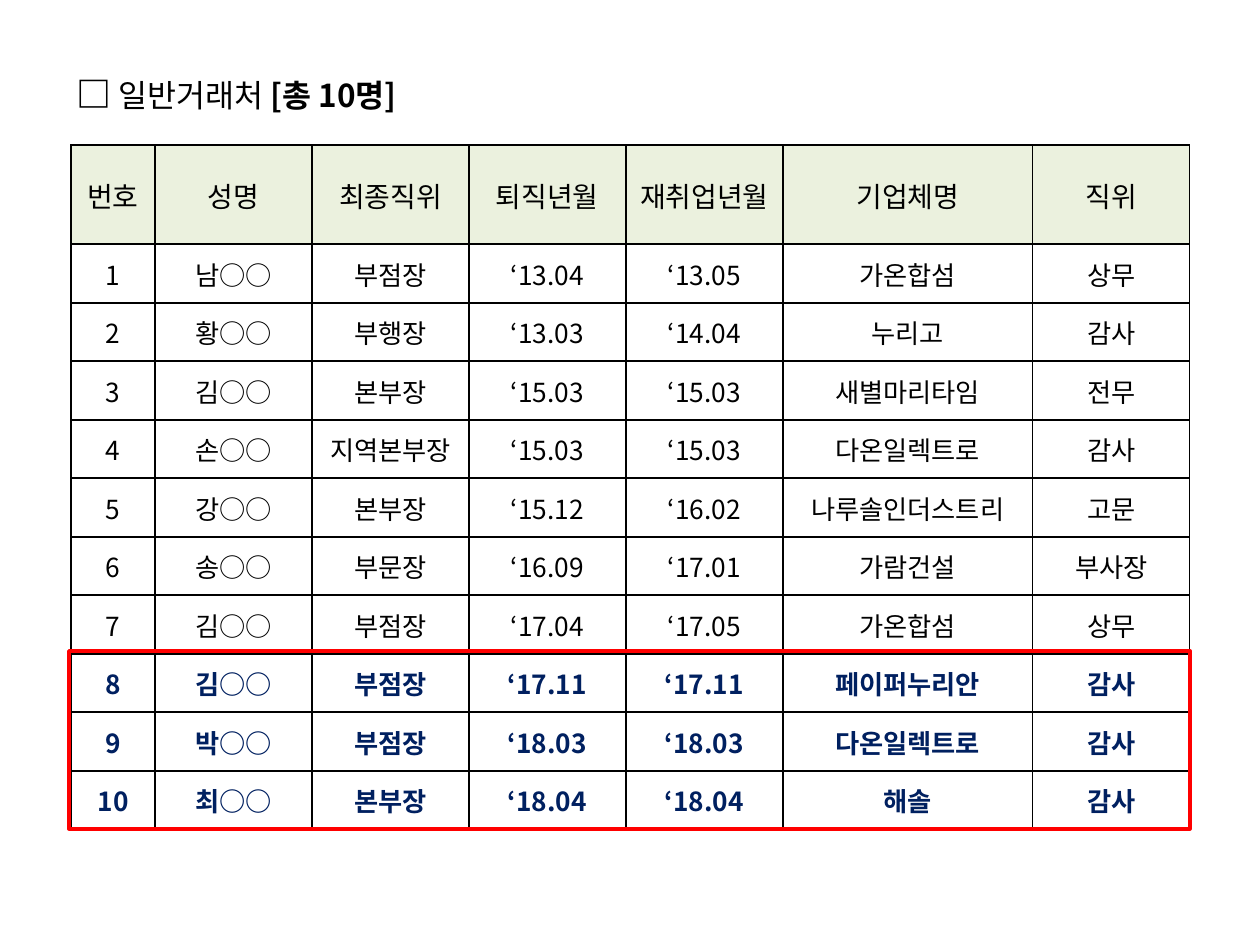
from pptx import Presentation
from pptx.dml.color import RGBColor
from pptx.enum.shapes import MSO_SHAPE
from pptx.enum.text import MSO_ANCHOR, MSO_AUTO_SIZE, PP_ALIGN
from pptx.oxml import parse_xml
from pptx.oxml.ns import nsdecls, qn
from pptx.util import Pt
from lxml.etree import SubElement

PX = 914400 / 126
FONT = "Noto Sans CJK KR"
BLACK = RGBColor(0x00, 0x00, 0x00)
NAVY = RGBColor(0x00, 0x20, 0x60)
RED = RGBColor(0xFF, 0x00, 0x00)
WHITE = RGBColor(0xFF, 0xFF, 0xFF)
HEADER_GREEN = RGBColor(0xEB, 0xF1, 0xDE)

COLS = [84, 157, 157, 157, 157, 250, 157]
ROWS = [99] + [59, 58] * 5
FIRST_RECENT = 8

RECORDS = [
    ("번호", "성명", "최종직위", "퇴직년월", "재취업년월", "기업체명", "직위"),
    ("1", "남○○", "부점장", "‘13.04", "‘13.05", "가온합섬", "상무"),
    ("2", "황○○", "부행장", "‘13.03", "‘14.04", "누리고", "감사"),
    ("3", "김○○", "본부장", "‘15.03", "‘15.03", "새별마리타임", "전무"),
    ("4", "손○○", "지역본부장", "‘15.03", "‘15.03", "다온일렉트로", "감사"),
    ("5", "강○○", "본부장", "‘15.12", "‘16.02", "나루솔인더스트리", "고문"),
    ("6", "송○○", "부문장", "‘16.09", "‘17.01", "가람건설", "부사장"),
    ("7", "김○○", "부점장", "‘17.04", "‘17.05", "가온합섬", "상무"),
    ("8", "김○○", "부점장", "‘17.11", "‘17.11", "페이퍼누리안", "감사"),
    ("9", "박○○", "부점장", "‘18.03", "‘18.03", "다온일렉트로", "감사"),
    ("10", "최○○", "본부장", "‘18.04", "‘18.04", "해솔", "감사"),
]


def px(*values):
    """Turn pixel lengths into EMU."""
    return [round(v * PX) for v in values]


def add_run(p, text, size, color=BLACK, bold=False):
    r = p.add_run()
    r.text = text
    r.font.size = Pt(size)
    r.font.bold = bold
    r.font.color.rgb = color
    r.font.name = FONT
    SubElement(r.font._element, qn("a:ea")).set("typeface", FONT)


prs = Presentation()
prs.slide_width, prs.slide_height = px(1260, 945)
s = prs.slides.add_slide(prs.slide_layouts[5])

# Heading
title = s.shapes.title
title.left, title.top, title.width, title.height = px(64, 66, 833, 55)
tf = title.text_frame
tf.word_wrap = True
tf.auto_size = MSO_AUTO_SIZE.SHAPE_TO_FIT_TEXT
tf.vertical_anchor = MSO_ANCHOR.TOP
p = tf.paragraphs[0]
p.alignment = PP_ALIGN.LEFT
add_run(p, "□", 20, bold=True)
add_run(p, " ", 18, bold=True)
add_run(p, "일반거래처 ", 18)
add_run(p, "[총 10명]", 18, bold=True)

# Table of re-employed retirees
table = s.shapes.add_table(len(ROWS), len(COLS),
                           *px(71, 145, sum(COLS), sum(ROWS))).table
for col, width in zip(table.columns, px(*COLS)):
    col.width = width
for row, height in zip(table.rows, px(*ROWS)):
    row.height = height

for i, record in enumerate(RECORDS):
    recent = i >= FIRST_RECENT
    for j, text in enumerate(record):
        cell = table.cell(i, j)
        cell.margin_left = cell.margin_right = cell.margin_top = px(1)[0]
        cell.margin_bottom = 0
        cell.vertical_anchor = MSO_ANCHOR.MIDDLE
        p = cell.text_frame.paragraphs[0]
        p.alignment = PP_ALIGN.CENTER
        add_run(p, text, 15 if i else 16, NAVY if recent else BLACK, recent)
        tc_pr = cell._tc.get_or_add_tcPr()
        for side in ("lnL", "lnR", "lnT", "lnB"):
            tc_pr.append(parse_xml(
                f'<a:{side} {nsdecls("a")} w="{Pt(1)}"><a:solidFill>'
                f'<a:srgbClr val="{BLACK}"/></a:solidFill></a:{side}>'))
        cell.fill.solid()
        cell.fill.fore_color.rgb = WHITE if i else HEADER_GREEN

# Frame around the most recent cases
frame = s.shapes.add_shape(MSO_SHAPE.RECTANGLE, *px(69, 651, 1121, 178))
frame.shadow.inherit = False
frame.fill.background()
frame.line.color.rgb = RED
frame.line.width = Pt(2)

prs.save("out.pptx")
